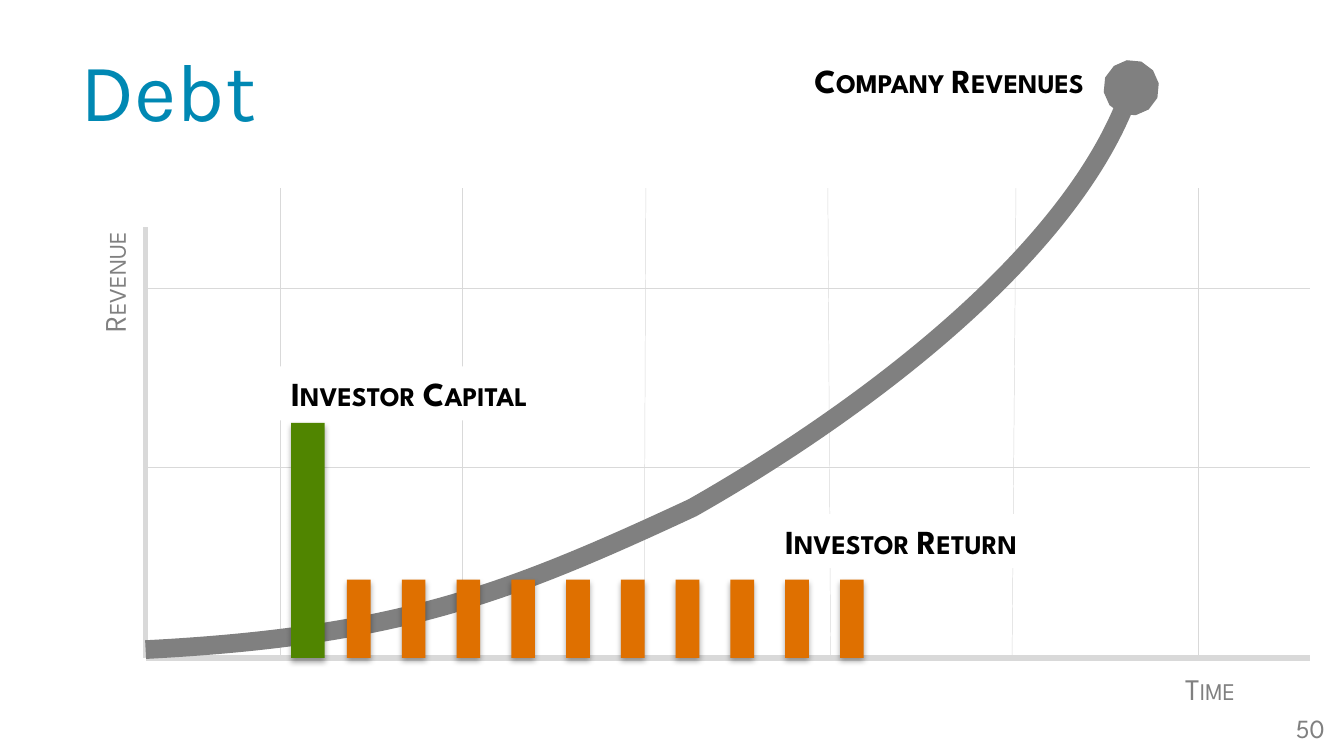
"""Build the Debt slide: company revenues over time against investor capital and return."""
from lxml import etree
from pptx import Presentation
from pptx import util as u
from pptx.dml.color import RGBColor
from pptx.enum import shapes, text
from pptx.oxml import ns

COLORS = {"title": "0088B3", "axis": "D9D9D9", "muted": "808080", "label": "000000",
          "paper": "FFFFFF", "capital": "508500", "return": "DF7000", "shadow": "000000"}
BODY_FONT = "League Spartan"


def style_text(shape, words, color, frame_format, align, font_format, small_caps=False):
    """Write one formatted paragraph into a shape."""
    frame = shape.text_frame
    for name, value in frame_format.items():
        setattr(frame, name, value)
    para = frame.paragraphs[0]
    para.alignment = align
    span = para.add_run()
    span.text = words
    for name, value in font_format.items():
        setattr(span.font, name, value)
    span.font.color.rgb = RGBColor.from_string(COLORS[color])
    if small_caps:
        span.font._element.set("cap", "small")


def add_line(page, start, end, width):
    """Draw a straight axis or grid line without a shadow."""
    line = page.shapes.add_connector(shapes.MSO_CONNECTOR.STRAIGHT,
                                     *[u.Pt(value) for value in (*start, *end)])
    line.line.color.rgb = RGBColor.from_string(COLORS["axis"])
    line.line.width = u.Pt(width)
    etree.SubElement(line._element.spPr, ns.qn("a:effectLst"))


deck = Presentation()
deck.slide_width, deck.slide_height = u.Pt(720), u.Pt(405)
layout = deck.slide_layouts[5]
for holder in list(layout.placeholders)[1:]:
    layout.shapes._spTree.remove(holder._element)
page = deck.slides.add_slide(layout)

title = page.shapes.title
for name, value in {"left": 36, "top": 13.5, "width": 648, "height": 67.5}.items():
    setattr(title, name, u.Pt(value))
style_text(title, "Debt", "title", {"vertical_anchor": text.MSO_ANCHOR.MIDDLE},
           text.PP_ALIGN.LEFT, {"name": "Karla", "size": u.Pt(44)})

axis_left, axis_right, axis_bottom = 78, 702, 352.5
add_line(page, (axis_left, axis_bottom), (axis_right, axis_bottom), 3)
add_line(page, (axis_left, axis_bottom), (axis_left, 121.7), 3)
for bottom_x, top_x in [(150, 150), (247.7, 247.7), (345, 346),
                        (445, 443.5), (542.2, 544.3), (642, 642)]:
    add_line(page, (bottom_x, 352), (top_x, 100.8), 0.25)
for y in (154.5, 250.5):
    add_line(page, (axis_left, y), (axis_right, y), 0.25)

curve_points = [(77.8, 347.6), (211.7, 341.1), (270, 318.8), (371.3, 272),
                (459.4, 221.6), (576.7, 134.4), (606.2, 46.6)]
builder = page.shapes.build_freeform(*curve_points[0], scale=u.Pt(1))
builder.add_line_segments(curve_points[1:], close=False)
curve = builder.convert_to_shape()
curve.shadow.inherit = False
curve.fill.background()
curve.line.color.rgb = RGBColor.from_string(COLORS["muted"])
curve.line.width = u.Pt(10)
etree.SubElement(curve.line._get_or_add_ln(), ns.qn("a:tailEnd"), type="oval")
segments = list(curve._element.iter(ns.qn("a:lnTo")))
outline = segments[0].getparent()
for first in range(0, len(segments), 3):
    bezier = etree.SubElement(outline, ns.qn("a:cubicBezTo"))
    for segment in segments[first:first + 3]:
        bezier.append(segment[0])
        outline.remove(segment)

bars = [("capital", 156, 226.6, 18)]
bars += [("return", 185.9 + 29.35 * i, 310.6, 12.7) for i in range(10)]
for color, left, top, width in bars:
    bar = page.shapes.add_shape(shapes.MSO_SHAPE.RECTANGLE, u.Pt(left), u.Pt(top),
                                u.Pt(width), u.Pt(axis_bottom - top))
    bar.fill.solid()
    bar.fill.fore_color.rgb = RGBColor.from_string(COLORS[color])
    bar.line.fill.background()
    effects = etree.SubElement(bar._element.spPr, ns.qn("a:effectLst"))
    shadow = etree.SubElement(effects, ns.qn("a:outerShdw"), blurRad=str(u.Pt(3.1)),
                              dist=str(u.Pt(1.8)), dir="5400000", rotWithShape="0")
    tint = etree.SubElement(shadow, ns.qn("a:srgbClr"), val=COLORS["shadow"])
    etree.SubElement(tint, ns.qn("a:alpha"), val="35000")

fitted = {"word_wrap": False, "auto_size": text.MSO_AUTO_SIZE.SHAPE_TO_FIT_TEXT}
axis_font = {"name": BODY_FONT, "size": u.Pt(16)}
label_font = {"name": BODY_FONT, "size": u.Pt(18), "bold": True}
labels = [("Revenue", 25.2, 140, 72, 26.6, 270, "muted", axis_font),
          ("Time", 625.7, 355.7, 43.2, 26.6, 0, "muted", axis_font),
          ("Investor Return", 411.6, 275.4, 140.4, 29, 0, "label", label_font),
          ("Investor Capital", 142.1, 196.2, 147.6, 29, 0, "label", label_font),
          ("Company Revenues", 419.4, 28.8, 168.5, 29, 0, "label", label_font)]
for words, left, top, width, height, turn, color, font_format in labels:
    box = page.shapes.add_textbox(u.Pt(left), u.Pt(top), u.Pt(width), u.Pt(height))
    box.rotation = turn
    if color == "label":
        box.fill.solid()
        box.fill.fore_color.rgb = RGBColor.from_string(COLORS["paper"])
    style_text(box, words, color, fitted, text.PP_ALIGN.RIGHT, font_format, True)

number = page.shapes.add_textbox(u.Pt(684), u.Pt(375.3), u.Pt(36), u.Pt(29.6))
style_text(number, "50", "muted",
           {"word_wrap": True, "vertical_anchor": text.MSO_ANCHOR.MIDDLE},
           text.PP_ALIGN.CENTER, {"name": BODY_FONT, "size": u.Pt(14)})

deck.save("out.pptx")
